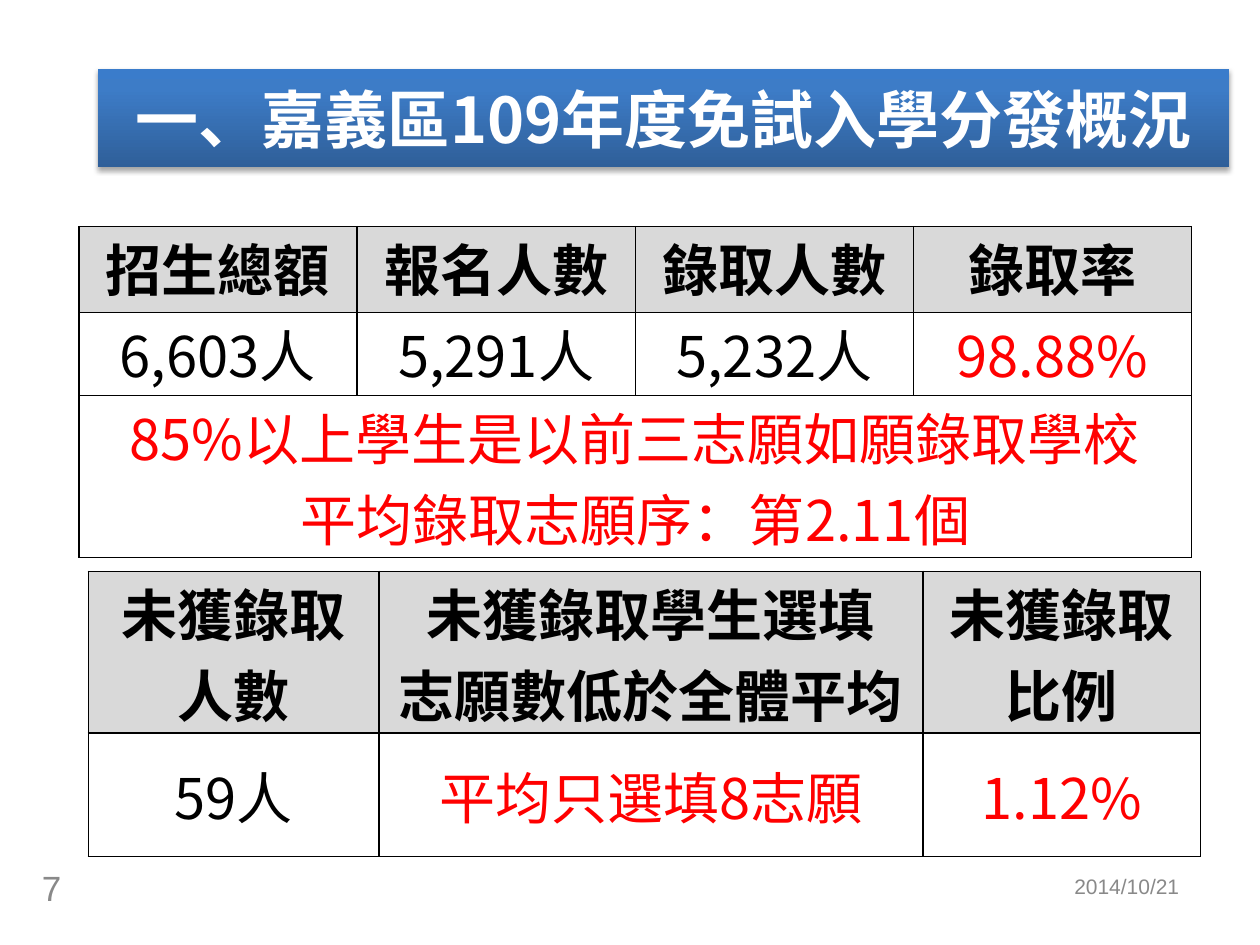
"""Build the slide on the 109 school-year admission results of the Chiayi district."""
from pptx import Presentation
from pptx.dml.color import RGBColor
from pptx.enum.shapes import MSO_SHAPE
from pptx.enum.text import MSO_ANCHOR as Anchor, MSO_AUTO_SIZE as AutoSize, PP_ALIGN as Align
from pptx.oxml import parse_xml
from pptx.oxml.ns import nsdecls
from pptx.util import Pt

COLORS = {"black": "000000", "white": "FFFFFF", "red": "FF0000", "gray": "898989",
          "header": "D9D9D9", "dark": "2F5F99", "mid": "3D7CC7", "light": "3A7CCB"}
CJK = "Noto Sans CJK SC"


def write(frame, text, size=32, font=CJK, color="black", bold=False, align=Align.CENTER):
    for index, line in enumerate(text.split("\n")):
        para = frame.add_paragraph() if index else frame.paragraphs[0]
        para.alignment = align
        span = para.add_run()
        span.text = line
        span.font.size = Pt(size)
        span.font.bold = bold
        span.font.color.rgb = RGBColor.from_string(COLORS[color])
        span.font.name = font
        span.font._element.append(parse_xml(f'<a:ea {nsdecls("a")} typeface="{CJK}"/>'))


deck = Presentation()
deck.slide_width, deck.slide_height = Pt(720), Pt(540)
page = deck.slides.add_slide(deck.slide_layouts[5])

date_box = page.shapes.add_textbox(Pt(486), Pt(487.5), Pt(195), Pt(37.5))
date_box.text_frame.word_wrap = True
date_box.text_frame.vertical_anchor = Anchor.MIDDLE
write(date_box.text_frame, "2014/10/21", size=12, font="Arial", color="gray", align=Align.RIGHT)

number = page.shapes.add_shape(MSO_SHAPE.OVAL, Pt(11.5), Pt(489), Pt(36), Pt(36))
number.shadow.inherit = False
number.fill.background()
number.line.fill.background()
frame = number.text_frame
frame.word_wrap = False
frame.vertical_anchor = Anchor.MIDDLE
frame.margin_left = frame.margin_right = frame.margin_top = frame.margin_bottom = 0
write(frame, "7", size=20, font="Arial", color="gray")

tables = [
    {"at": (45, 129.5), "widths": [159] * 4, "heights": [49, 47.5, 92.5], "anchor": Anchor.TOP,
     "rows": [["招生總額", "報名人數", "錄取人數", "錄取率"],
              ["6,603人", "5,291人", "5,232人", "98.88%"],
              ["85%以上學生是以前三志願如願錄取學校\n平均錄取志願序：第2.11個"]],
     "red": ["98.88%", "85%以上學生是以前三志願如願錄取學校\n平均錄取志願序：第2.11個"]},
    {"at": (50.5, 326.5), "widths": [166, 311, 158.5], "heights": [92.5, 70.5], "anchor": Anchor.MIDDLE,
     "rows": [["未獲錄取\n人數", "未獲錄取學生選填\n志願數低於全體平均", "未獲錄取比例"],
              ["59人", "平均只選填8志願", "1.12%"]],
     "red": ["平均只選填8志願", "1.12%"]},
]
for data in tables:
    widths, heights = data["widths"], data["heights"]
    left, top = data["at"]
    table = page.shapes.add_table(len(heights), len(widths), Pt(left), Pt(top),
                                  Pt(sum(widths)), Pt(sum(heights))).table
    table.first_row = table.horz_banding = False
    for column, width in zip(table.columns, widths):
        column.width = Pt(width)
    for row, height in zip(table.rows, heights):
        row.height = Pt(height)
    for cell in table.iter_cells():
        cell.margin_left = cell.margin_right = Pt(5)
        cell.margin_top = cell.margin_bottom = 0
        cell.vertical_anchor = data["anchor"]
        for side in "LRTB":
            cell._tc.get_or_add_tcPr().append(parse_xml(
                f'<a:ln{side} {nsdecls("a")} w="{Pt(1)}"><a:solidFill>'
                f'<a:srgbClr val="{COLORS["black"]}"/></a:solidFill></a:ln{side}>'))
        cell.fill.background()
    for r, texts in enumerate(data["rows"]):
        if len(texts) == 1:
            table.cell(r, 0).merge(table.cell(r, len(widths) - 1))
        for c, text in enumerate(texts):
            cell = table.cell(r, c)
            if r == 0:
                cell.fill.solid()
                cell.fill.fore_color.rgb = RGBColor.from_string(COLORS["header"])
            write(cell.text_frame, text, font="Calibri" if r == 0 else CJK, bold=r == 0,
                  color="red" if text in data["red"] else "black")

title = page.shapes.title
title.left, title.top, title.width, title.height = Pt(56), Pt(39.5), Pt(646.5), Pt(56)
title.text_frame.auto_size = AutoSize.NONE
title.text_frame.vertical_anchor = Anchor.MIDDLE
write(title.text_frame, "一、嘉義區109年度免試入學分發概況", size=36, color="white", bold=True)
stops = "".join(f'<a:gs pos="{place * 1000}"><a:srgbClr val="{COLORS[name]}"/></a:gs>'
                for place, name in [(0, "dark"), (80, "mid"), (100, "light")])
title._element.spPr.append(parse_xml(
    f'<a:gradFill {nsdecls("a")} rotWithShape="1"><a:gsLst>{stops}</a:gsLst>'
    '<a:lin ang="16200000" scaled="0"/></a:gradFill>'))
title._element.spPr.append(parse_xml(
    f'<a:effectLst {nsdecls("a")}><a:outerShdw blurRad="{Pt(3.1)}" dist="{Pt(1.8)}" dir="5400000" '
    f'rotWithShape="0"><a:srgbClr val="{COLORS["black"]}"><a:alpha val="35000"/></a:srgbClr>'
    '</a:outerShdw></a:effectLst>'))
page.shapes._spTree.append(title._element)

deck.save("out.pptx")
